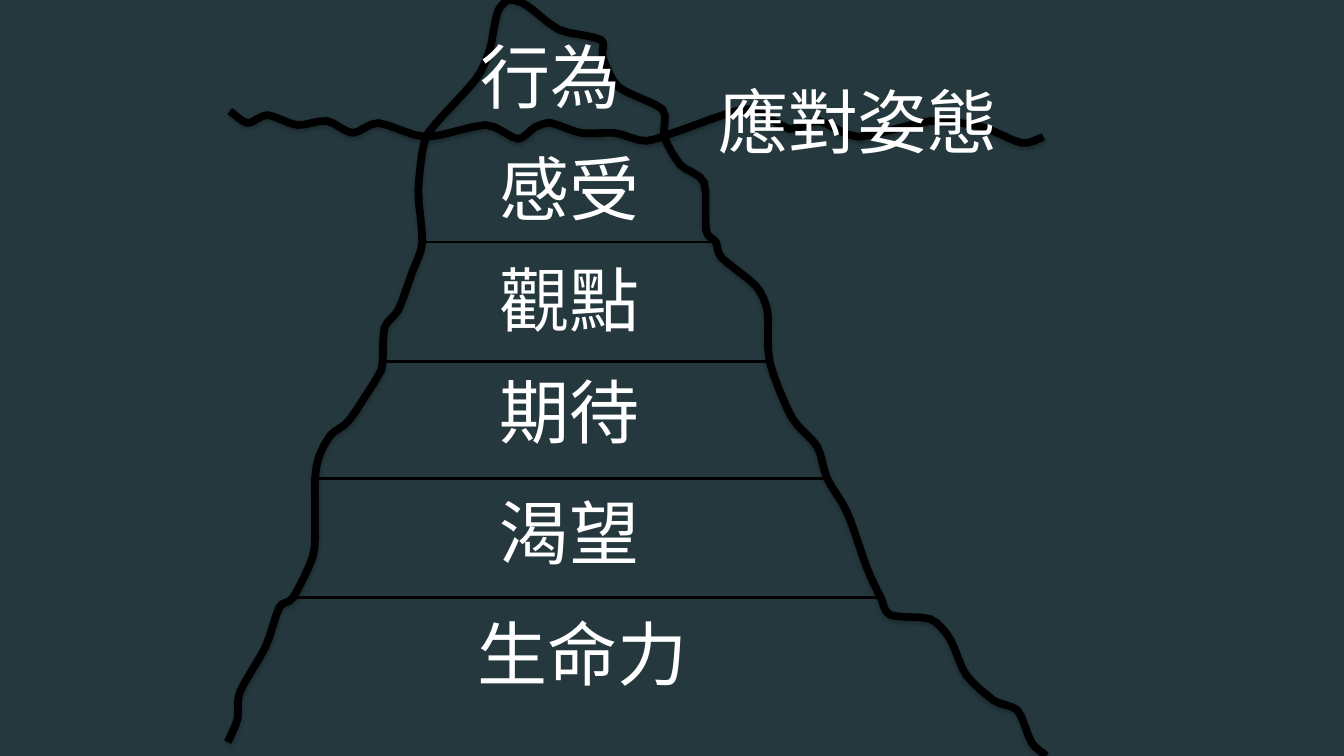
from dataclasses import dataclass
from itertools import chain

from lxml.etree import SubElement
from pptx import Presentation
from pptx.dml.color import RGBColor
from pptx.enum.shapes import MSO_CONNECTOR
from pptx.enum.text import MSO_ANCHOR, PP_ALIGN
from pptx.oxml import parse_xml
from pptx.oxml.ns import nsdecls, qn
from pptx.util import Cm, Pt

BACKGROUND = RGBColor(0x24, 0x38, 0x3E)
BLACK = RGBColor(0, 0, 0)
WHITE = RGBColor(0xFF, 0xFF, 0xFF)
FONT = "Noto Sans CJK TC"

ICEBERG_LEFT, ICEBERG_TOP = 11.48, 0
LABEL_HEIGHT = 5.08
LABEL_WIDTHS = {2: 8.74, 3: 12.06, 4: 14.35}  # by number of characters
CURVE_STEPS = 4
TENSION = 0.4
UNITS_PER_CM = 100


@dataclass
class Layer:
    """A band of the iceberg; its edges run down to its floor, in cm."""
    name: str
    center: tuple
    left_edge: list
    right_edge: list


PEAK = (14.2, 0)
LAYERS = [
    Layer("行為", (16.28, 3.81),
          [(13.6, 0.6), (13.2, 2.5), (12.5, 4), (10.5, 6.2), (9.9, 7.2)],
          [(15.1, 0.3), (16.7, 1.5), (18.8, 2), (18.9, 2.9), (19.7, 4.4),
           (21.9, 5.5), (22, 6.9)]),
    Layer("感受", (17.22, 9.45),
          [(9.6, 9.6), (9.8, 12.2)],
          [(22.8, 8.3), (24, 9.2), (24.1, 11.6), (24.6, 12.2)]),
    Layer("觀點", (17.22, 15.06),
          [(9.3, 13.7), (8.6, 15.6), (7.9, 16.5), (7.8, 18.2)],
          [(24.9, 13), (26.6, 14.4), (27.2, 15.7), (27.3, 18.2)]),
    Layer("期待", (17.22, 20.7),
          [(7.6, 18.9), (6.1, 21.2), (5.2, 21.9), (4.6, 23), (4.4, 24.1)],
          [(28.4, 21), (29.7, 22.5), (30.2, 24.1)]),
    Layer("渴望", (17.2, 26.8),
          [(4.4, 26), (4.3, 28), (3.3, 30.1)],
          [(31.2, 25.8), (32.2, 28.6), (32.9, 30.1)]),
    Layer("生命力", (17.88, 32.87),
          [(2.6, 30.6), (1.9, 32.6), (0.6, 34.9), (0.5, 36.2), (0, 37.4)],
          [(33.4, 31), (35.4, 31.2), (36.4, 32.2), (37.2, 34), (38.6, 35.3),
           (39.8, 35.8), (40.5, 37.4), (41.25, 38.1)]),
]
COPING_STANCE = ("應對姿態", (31.76, 6.05))

# Crests and troughs of the sea in turn, in cm
WATERLINE = [
    (0.1, 5.6), (1, 6.2), (2, 5.8), (3.5, 6.3), (5, 6.1), (6.3, 6.7),
    (7.6, 6.2), (10, 6.9), (13, 6.3), (14.6, 7), (15.5, 6.4), (16.3, 6.2),
    (17.8, 6.7), (19.5, 6.7), (21.1, 7.1), (23, 6.5), (26.2, 5.5),
    (28.3, 6.5), (29.8, 6.1), (31.8, 6.9), (35.4, 6.1), (38, 6.4),
    (40, 7.2), (41.1, 6.9),
]


def smooth_curve(points):
    """Join the points by cubic Hermite arcs, each cut into short steps."""
    padded = [points[0], *points, points[-1]]
    curve = [points[0]]
    for before, start, end, after in zip(padded, padded[1:], padded[2:], padded[3:]):
        for step in range(1, CURVE_STEPS + 1):
            t = step / CURVE_STEPS
            curve.append(tuple(
                (2 * t**3 - 3 * t**2 + 1) * s + (3 * t**2 - 2 * t**3) * e
                + TENSION * (t**3 - 2 * t**2 + t) * (e - b)
                + TENSION * (t**3 - t**2) * (a - s)
                for b, s, e, a in zip(before, start, end, after)))
    return curve


def add_rough_line(shapes, left, top, points):
    curve = [(x * UNITS_PER_CM, y * UNITS_PER_CM) for x, y in smooth_curve(points)]
    builder = shapes.build_freeform(*curve[0], scale=Cm(1) / UNITS_PER_CM)
    builder.add_line_segments(curve[1:], close=False)
    shape = builder.convert_to_shape(Cm(left), Cm(top))
    shape.fill.background()
    shape.line.color.rgb = BLACK
    shape.line.width = Pt(11)
    shape._element.spPr.append(parse_xml(
        f'<a:effectLst {nsdecls("a")}>'
        '<a:outerShdw blurRad="50800" dist="25400" dir="5400000">'
        '<a:srgbClr val="000000"><a:alpha val="25000"/></a:srgbClr>'
        '</a:outerShdw></a:effectLst>'))


def add_floor(shapes, left, top, layer):
    """Draw the straight line between the lowest points of both edges."""
    (start, y), (end, _) = layer.left_edge[-1], layer.right_edge[-1]
    floor = shapes.add_connector(
        MSO_CONNECTOR.STRAIGHT,
        Cm(left + start), Cm(top + y), Cm(left + end), Cm(top + y))
    floor.line.color.rgb = BLACK
    floor.line.width = Pt(4)
    SubElement(floor._element.spPr, qn("a:effectLst"))


def add_label(slide, left, top, text, center):
    width = LABEL_WIDTHS[len(text)]
    center_x, center_y = center
    box = slide.shapes.add_textbox(
        Cm(left + center_x - width / 2), Cm(top + center_y - LABEL_HEIGHT / 2),
        Cm(width), Cm(LABEL_HEIGHT))
    frame = box.text_frame
    frame.word_wrap = True
    frame.vertical_anchor = MSO_ANCHOR.MIDDLE
    frame.margin_left = frame.margin_right = Cm(0.08)
    frame.margin_top = frame.margin_bottom = Cm(0.08)
    paragraph = frame.paragraphs[0]
    paragraph.alignment = PP_ALIGN.CENTER
    run = paragraph.add_run()
    run.text = text
    run.font.size = Pt(100)
    run.font.color.rgb = WHITE
    run.font.name = FONT
    SubElement(run.font._element, qn("a:ea"), typeface=FONT)


def add_iceberg(slide, left, top):
    left_slope = list(chain.from_iterable(layer.left_edge for layer in LAYERS))
    right_slope = list(chain.from_iterable(layer.right_edge for layer in LAYERS))
    mountain = [*reversed(left_slope), PEAK, *right_slope]

    shapes = slide.shapes.add_group_shape().shapes
    for points in (mountain, WATERLINE):
        add_rough_line(shapes, left, top, points)
    for layer in LAYERS[1:-1]:  # the sea closes the top layer, the last is open
        add_floor(shapes, left, top, layer)

    for layer in LAYERS:
        add_label(slide, left, top, layer.name, layer.center)
    add_label(slide, left, top, *COPING_STANCE)


def main():
    presentation = Presentation()
    presentation.slide_width = Cm(67.73)
    presentation.slide_height = Cm(38.1)
    slide = presentation.slides.add_slide(presentation.slide_layouts[6])
    slide.background.fill.solid()
    slide.background.fill.fore_color.rgb = BACKGROUND
    add_iceberg(slide, ICEBERG_LEFT, ICEBERG_TOP)
    presentation.save("out.pptx")


if __name__ == "__main__":
    main()
